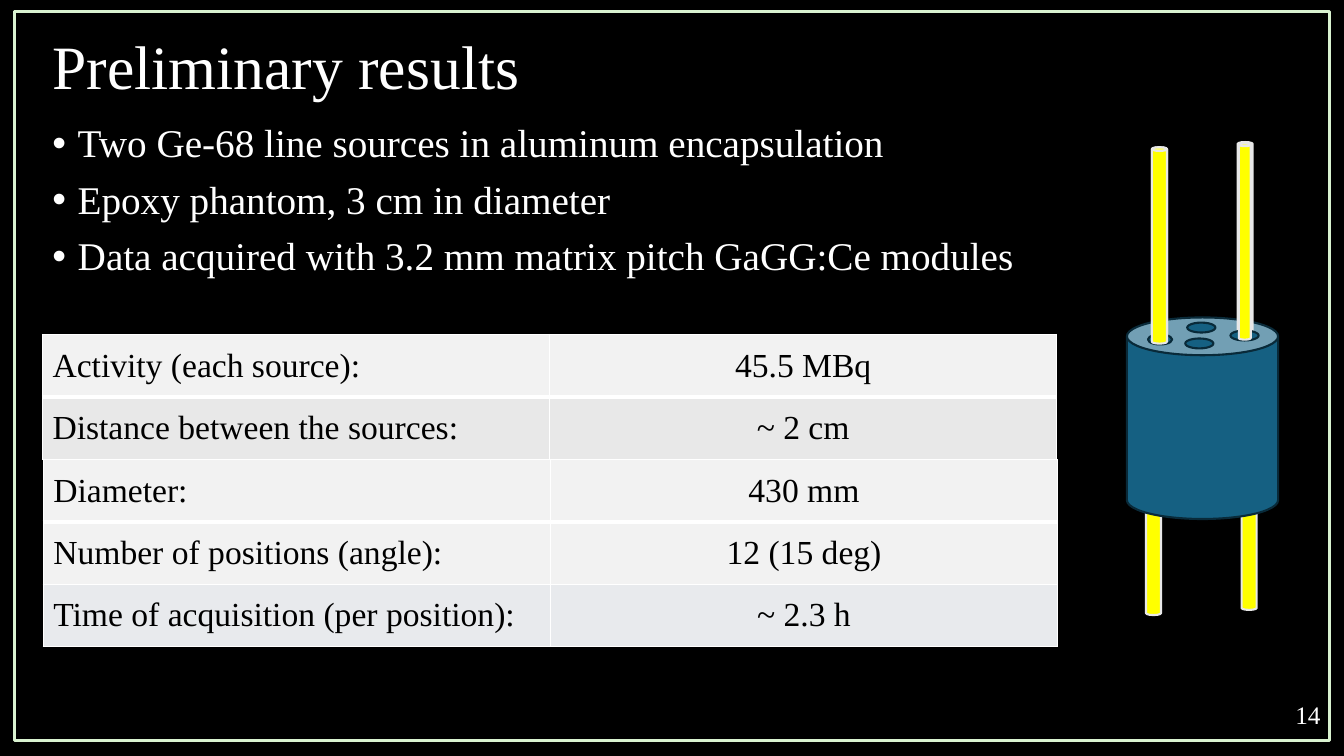
from dataclasses import dataclass

import pptx
import pptx.dml.color
import pptx.enum.shapes
import pptx.enum.text
import pptx.oxml
import pptx.oxml.ns
import pptx.util
from pptx.util import Cm

SHAPE = pptx.enum.shapes.MSO_SHAPE
ALIGN = pptx.enum.text.PP_ALIGN
ANCHOR = pptx.enum.text.MSO_ANCHOR


@dataclass(frozen=True)
class Theme:
    font: str = "Times New Roman"
    background: str = "000000"
    light: str = "FFFFFF"
    dark: str = "000000"
    frame: str = "D9F2D0"
    source: str = "FFFF00"
    casing: str = "E8E8E8"
    phantom: str = "156082"
    phantom_edge: str = "092A39"
    row_pale: str = "F2F2F2"
    row_gray: str = "E8E8E8"
    row_blue: str = "E8EAED"
    title_size: int = 44
    bullet_size: int = 28
    table_size: int = 24
    number_size: int = 18


THEME = Theme()


@dataclass(frozen=True)
class Box:
    left: float
    top: float
    width: float
    height: float

    def lengths(self) -> tuple:
        return Cm(self.left), Cm(self.top), Cm(self.width), Cm(self.height)


@dataclass(frozen=True)
class Part:
    kind: int
    box: Box
    fill: str
    edge: str


@dataclass(frozen=True)
class Row:
    label: str
    value: str
    fill: str


def rgb(code: str):
    return pptx.dml.color.RGBColor.from_string(code)


def apply(target, values: dict) -> None:
    for name, value in values.items():
        setattr(target, name, value)


def write(paragraph, text: str, size: int, color: str, **layout) -> None:
    run = paragraph.add_run()
    run.text = text
    apply(run.font, {"name": THEME.font, "size": pptx.util.Pt(size)})
    run.font.color.rgb = rgb(color)
    apply(paragraph, layout)


def add_bullet(paragraph) -> None:
    properties = paragraph._p.get_or_add_pPr()
    apply_indent = {"marL": Cm(0.64), "indent": -Cm(0.64)}
    for name, value in apply_indent.items():
        properties.set(name, str(value))
    for tag, name, value in (("buFont", "typeface", "Arial"), ("buChar", "char", "•")):
        pptx.oxml.ns.qn(f"a:{tag}")
        mark = properties.makeelement(pptx.oxml.ns.qn(f"a:{tag}"), {name: value})
        properties.append(mark)


def draw_part(slide, part: Part) -> None:
    shape = slide.shapes.add_shape(part.kind, *part.box.lengths())
    shape.shadow.inherit = False
    shape.fill.solid()
    shape.fill.fore_color.rgb = rgb(part.fill)
    shape.line.color.rgb = rgb(part.edge)
    shape.line.width = pptx.util.Pt(1.5)


def set_borders(cell, top: float, bottom: float) -> None:
    properties = cell._tc.get_or_add_tcPr()
    sides = (("lnL", 1), ("lnR", 1), ("lnT", top), ("lnB", bottom))
    for position, (tag, points) in enumerate(sides):
        line = pptx.oxml.parse_xml(
            f'<a:{tag} {pptx.oxml.ns.nsdecls("a")} w="{pptx.util.Pt(points)}">'
            f'<a:solidFill><a:srgbClr val="{THEME.light}"/></a:solidFill></a:{tag}>')
        properties.insert(position, line)


def draw_table(slide, box: Box, rows: list[Row]) -> None:
    table = slide.shapes.add_table(len(rows), 2, *box.lengths()).table
    apply(table, {"first_row": False, "horz_banding": False})
    for index, row in enumerate(rows):
        # The first row is set off by a thick rule
        top, bottom = 3 if index == 1 else 1, 3 if index == 0 else 1
        for column, (text, align) in enumerate(((row.label, ALIGN.LEFT), (row.value, ALIGN.CENTER))):
            cell = table.cell(index, column)
            cell.vertical_anchor = ANCHOR.MIDDLE
            cell.fill.solid()
            cell.fill.fore_color.rgb = rgb(row.fill)
            set_borders(cell, top, bottom)
            write(cell.text_frame.paragraphs[0], text, THEME.table_size, THEME.dark, alignment=align)


def rod(left: float, top: float, width: float = 0.38, height: float = 4.83) -> Part:
    return Part(SHAPE.CAN, Box(left, top, width, height), THEME.source, THEME.casing)


def hole(left: float, top: float, width: float = 0.71) -> Part:
    return Part(SHAPE.OVAL, Box(left, top, width, 0.25), THEME.phantom, THEME.phantom_edge)


BULLETS = [
    "Two Ge-68\u00a0line sources in aluminum encapsulation".replace("\u00a0", chr(160)),
    "Epoxy phantom, 3 cm in diameter",
    "Data acquired with 3.2 mm matrix pitch GaGG:Ce modules",
]
SCAN_ROWS = [
    Row("Diameter:", "430 mm", THEME.row_pale),
    Row("Number of positions (angle):", "12 (15 deg)", THEME.row_pale),
    Row("Time of acquisition (per position):", "~ 2.3 h", THEME.row_blue),
]
SOURCE_ROWS = [
    Row("Activity (each source):", "45.5 MBq", THEME.row_pale),
    Row("Distance between the sources:", "~ 2 cm", THEME.row_gray),
]
# Phantom with its line sources, from back to front
PHANTOM = [
    rod(31.29, 10.54),
    rod(28.88, 10.67),
    Part(SHAPE.CAN, Box(28.4, 8, 3.81, 5.08), THEME.phantom, THEME.phantom_edge),
    rod(31.19, 3.58),
    rod(29.03, 3.71),
    hole(28.93, 8.43, 0.61),
    hole(29.87, 8.53),
    hole(29.92, 8.13),
    hole(31.01, 8.33),
    rod(29.03, 3.71, height=4.95),
    rod(31.22, 3.61, width=0.3, height=4.95),
]


def main() -> None:
    deck = pptx.Presentation()
    apply(deck, {"slide_width": Cm(33.87), "slide_height": Cm(19.05)})
    slide = deck.slides.add_slide(deck.slide_layouts[5])
    slide.background.fill.solid()
    slide.background.fill.fore_color.rgb = rgb(THEME.background)

    # Title
    title = slide.shapes.title
    apply(title, dict(zip(("left", "top", "width", "height"), Box(1.07, -0.1, 29.21, 3.68).lengths())))
    apply(title.text_frame, {"vertical_anchor": ANCHOR.MIDDLE, "word_wrap": True})
    write(title.text_frame.paragraphs[0], "Preliminary results", THEME.title_size, THEME.light,
          alignment=ALIGN.LEFT, line_spacing=0.9)

    # Bullets
    setup = slide.shapes.add_textbox(*Box(1.07, 3, 29.21, 4.55).lengths()).text_frame
    setup.word_wrap = True
    for index, text in enumerate(BULLETS):
        paragraph = setup.add_paragraph() if index else setup.paragraphs[0]
        write(paragraph, text, THEME.bullet_size, THEME.light,
              line_spacing=0.9, space_before=pptx.util.Pt(10))
        add_bullet(paragraph)

    # Slide number
    number = slide.shapes.add_textbox(*Box(25.91, 17.5, 7.62, 1.02).lengths()).text_frame
    apply(number, {"vertical_anchor": ANCHOR.MIDDLE, "word_wrap": True})
    write(number.paragraphs[0], "14", THEME.number_size, THEME.light, alignment=ALIGN.RIGHT)

    # Scan table, phantom, frame and source table
    draw_table(slide, Box(1.09, 11.58, 25.56, 4.71), SCAN_ROWS)
    for part in PHANTOM:
        draw_part(slide, part)
    frame = slide.shapes.add_shape(SHAPE.RECTANGLE, *Box(0.36, 0.3, 33.15, 18.36).lengths())
    frame.shadow.inherit = False
    frame.fill.background()
    frame.line.color.rgb = rgb(THEME.frame)
    frame.line.width = pptx.util.Pt(2.25)
    draw_table(slide, Box(1.07, 8.43, 25.56, 3.14), SOURCE_ROWS)

    deck.save("out.pptx")


if __name__ == "__main__":
    main()
